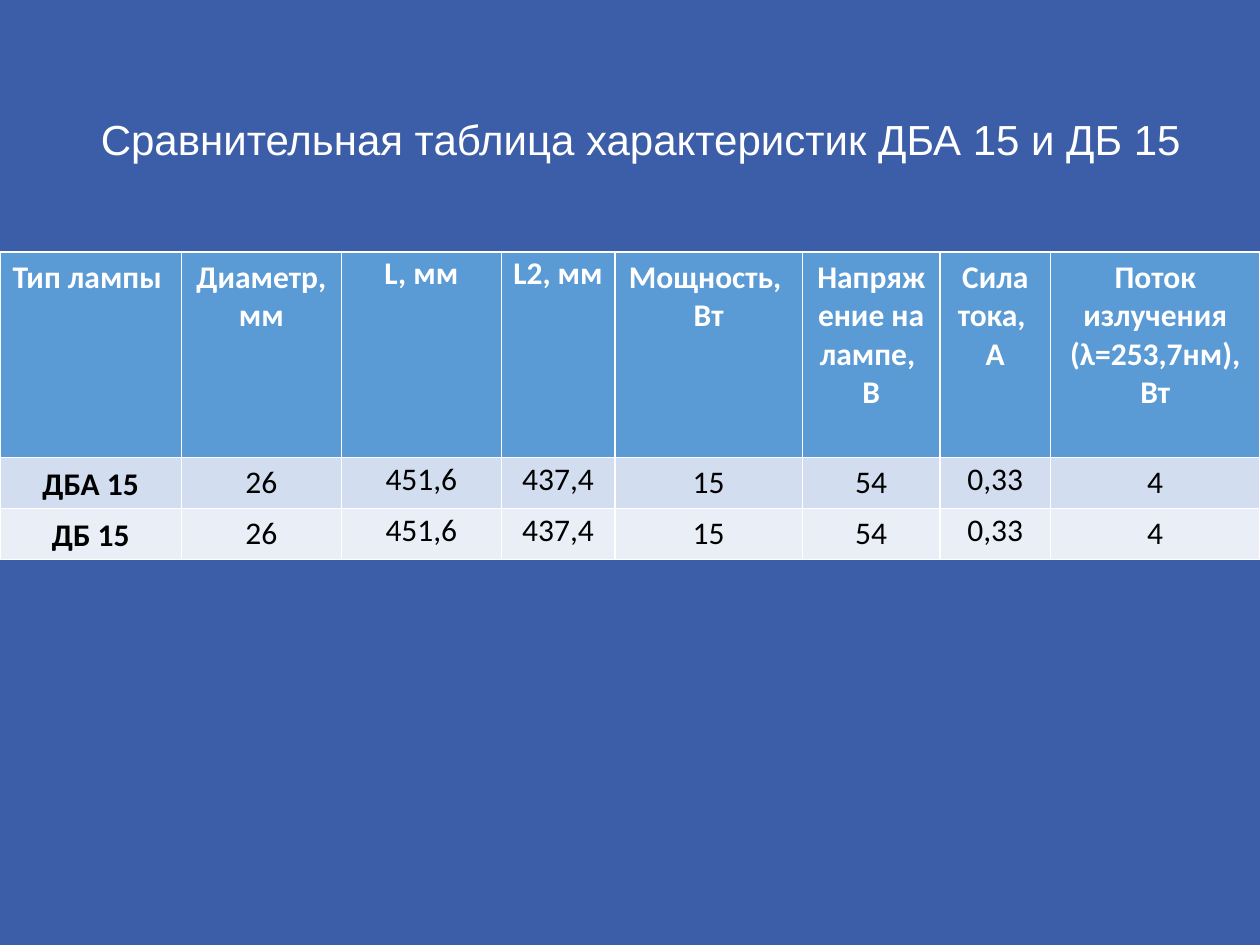
from dataclasses import dataclass
from pptx import Presentation
from pptx.dml.color import RGBColor
from pptx.enum.text import MSO_ANCHOR, MSO_AUTO_SIZE, PP_ALIGN
from pptx.util import Inches, Pt


@dataclass
class Theme:
    background: str = "3C5DA7"
    light: str = "FFFFFF"
    dark: str = "000000"
    row_fills: tuple = ("5B9BD5", "D2DEEF", "EAEFF7")
    title_font: str = "Arial"
    table_font: str = "Calibri"
    title_size: int = 24
    table_size: int = 18


def color(value):
    return RGBColor.from_string(value)


def set_font(paragraph, name, size, value, bold=False):
    paragraph.font.name = name
    paragraph.font.size = Pt(size)
    paragraph.font.bold = bold
    paragraph.font.color.rgb = color(value)


theme = Theme()
rows = [
    ["Тип лампы", "Диаметр, мм", "L, мм", "L2, мм", "Мощность,  \nВт",
     "Напряжение на лампе, \nВ", "Сила тока, \nА", "Поток излучения (λ=253,7нм),Вт"],
    ["ДБА 15", "26", "451,6", "437,4", "15", "54", "0,33", "4"],
    ["ДБ 15", "26", "451,6", "437,4", "15", "54", "0,33", "4"],
]
column_widths = [1.44, 1.27, 1.27, 0.9, 1.49, 1.09, 0.88, 1.66]
row_heights = [1.63, 0.4, 0.4]
compact_columns = {2, 3, 6}

deck = Presentation()
deck.slide_width, deck.slide_height = Inches(10), Inches(7.5)
page = deck.slides.add_slide(deck.slide_layouts[5])
page.background.fill.solid()
page.background.fill.fore_color.rgb = color(theme.background)

title = page.shapes.title
title.left, title.top = Inches(0.69), Inches(0.4)
title.width, title.height = Inches(8.97), Inches(1.45)
frame = title.text_frame
frame.text = "Сравнительная таблица характеристик ДБА 15 и ДБ 15"
frame.auto_size = MSO_AUTO_SIZE.NONE
frame.vertical_anchor = MSO_ANCHOR.MIDDLE
frame.margin_left = frame.margin_right = Inches(0.11)
frame.paragraphs[0].alignment = PP_ALIGN.LEFT
frame.paragraphs[0].line_spacing = 0.9
set_font(frame.paragraphs[0], theme.title_font, theme.title_size, theme.light)

table = page.shapes.add_table(
    len(rows), len(column_widths), 0, Inches(2),
    Inches(sum(column_widths)), Inches(sum(row_heights))).table
for column, width in zip(table.columns, column_widths):
    column.width = Inches(width)

for row_index, (texts, height, fill) in enumerate(zip(rows, row_heights, theme.row_fills)):
    table.rows[row_index].height = Inches(height)
    header = row_index == 0
    for column_index, text in enumerate(texts):
        cell = table.cell(row_index, column_index)
        lamp_name = column_index == 0 and not header
        compact = lamp_name or (column_index in compact_columns and not (header and column_index == 6))
        cell.text = text
        cell.fill.solid()
        cell.fill.fore_color.rgb = color(fill)
        if compact:
            cell.margin_left = cell.margin_right = Inches(0.06)
            cell.margin_top = cell.margin_bottom = 0
        if lamp_name:
            cell.vertical_anchor = MSO_ANCHOR.MIDDLE
        for paragraph in cell.text_frame.paragraphs:
            paragraph.alignment = PP_ALIGN.LEFT if header and column_index == 0 else PP_ALIGN.CENTER
            if compact:
                paragraph.line_spacing = 1.07
            set_font(paragraph, theme.table_font, theme.table_size,
                     theme.light if header else theme.dark, header or lamp_name)

deck.save("out.pptx")
